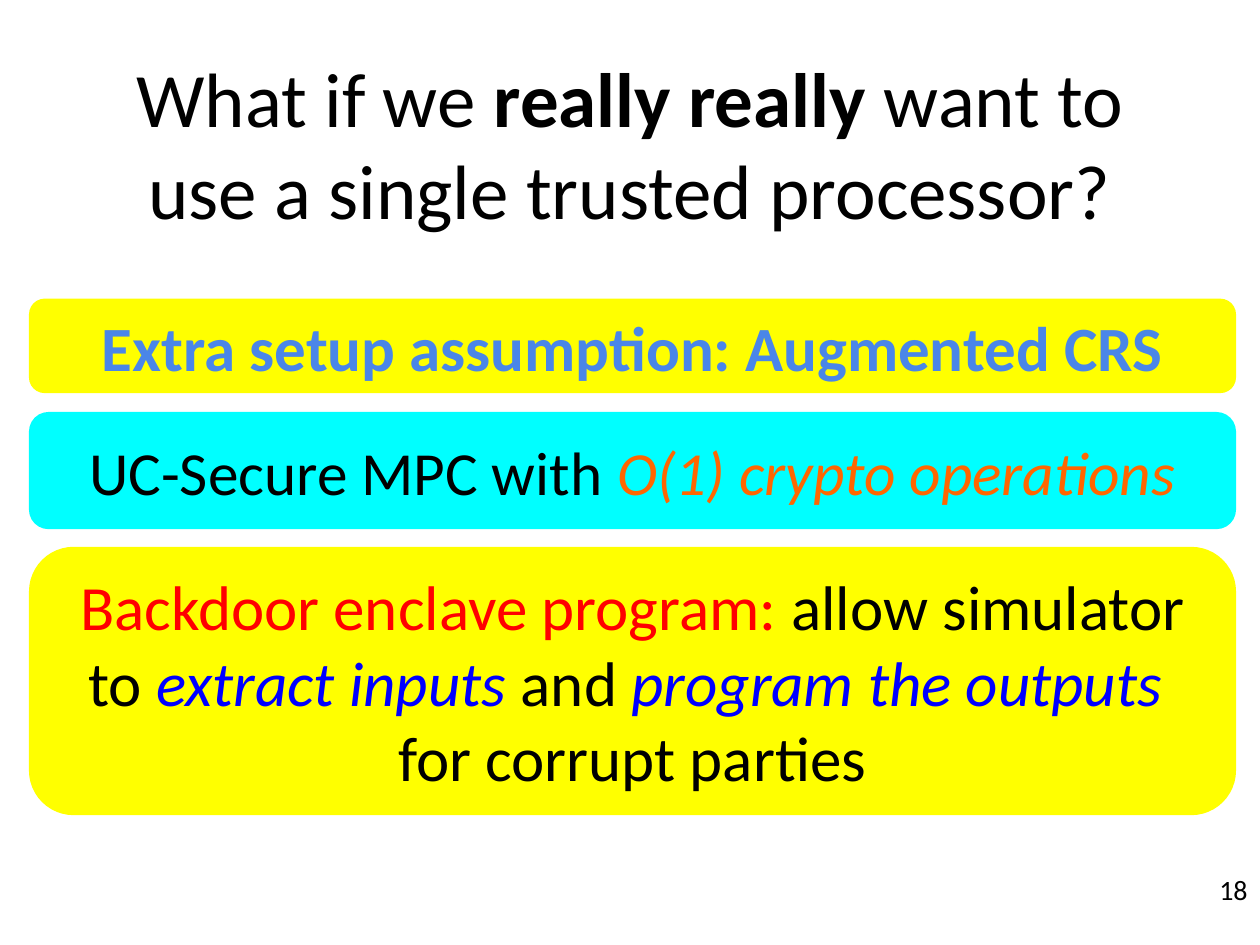
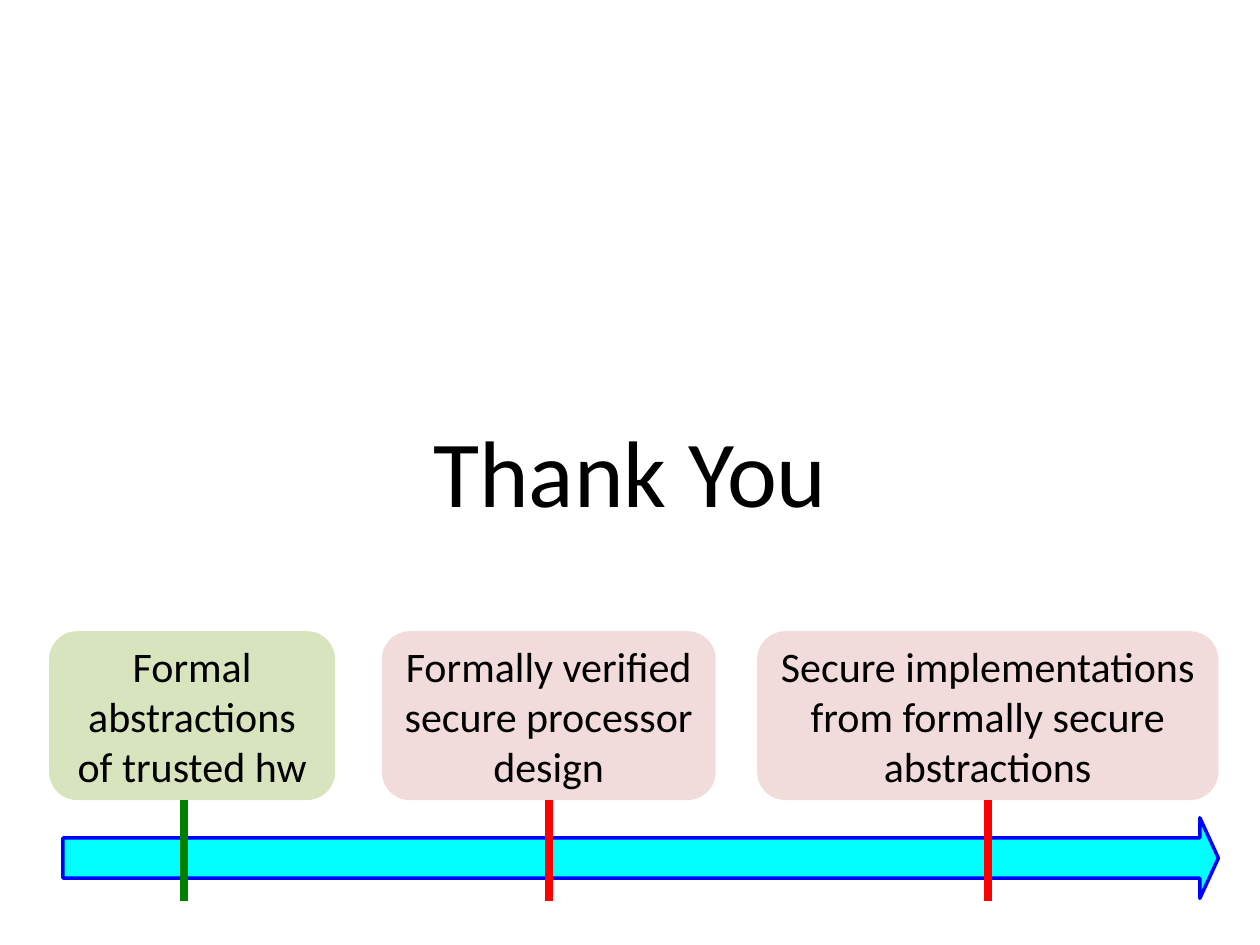
"""Build two slides: the single trusted processor answer and the closing roadmap."""
import pptx
import pptx.dml.color
import pptx.enum.shapes
import pptx.enum.text
import pptx.util
import lxml.etree

Inches = pptx.util.Inches
Pt = pptx.util.Pt
RGBColor = pptx.dml.color.RGBColor
SHAPE = pptx.enum.shapes.MSO_SHAPE
ALIGN = pptx.enum.text.PP_ALIGN
ANCHOR = pptx.enum.text.MSO_ANCHOR

FONT = "Calibri"
BLACK = RGBColor(0x00, 0x00, 0x00)
YELLOW = RGBColor(0xFF, 0xFF, 0x00)
CYAN = RGBColor(0x00, 0xFF, 0xFF)
BLUE = RGBColor(0x00, 0x00, 0xFF)
SKY = RGBColor(0x4A, 0x86, 0xE8)
RED = RGBColor(0xFF, 0x00, 0x00)
ORANGE = RGBColor(0xFF, 0x66, 0x00)
GREEN = RGBColor(0x00, 0x80, 0x00)
PALE_GREEN = RGBColor(0xD7, 0xE4, 0xBD)
PALE_RED = RGBColor(0xF2, 0xDC, 0xDB)


def write(sp, size, runs, align=ALIGN.CENTER, anchor=ANCHOR.MIDDLE):
    tf = sp.text_frame
    tf.word_wrap = True
    tf.vertical_anchor = anchor
    tf.margin_left = tf.margin_right = tf.margin_top = tf.margin_bottom = Inches(0.1)
    p = tf.paragraphs[0]
    p.alignment = align
    for text, color, style in runs:
        if text == "\n":
            p.add_line_break()
            continue
        r = p.add_run()
        r.text = text
        r.font.name = FONT
        r.font.size = Pt(size)
        r.font.color.rgb = color
        r.font.bold = style == "b"
        r.font.italic = style == "i"


def add_block(s, kind, left, top, width, height, fill):
    sp = s.shapes.add_shape(kind, Inches(left), Inches(top), Inches(width), Inches(height))
    sp.shadow.inherit = False
    sp.fill.solid()
    sp.fill.fore_color.rgb = fill
    sp.line.fill.background()
    return sp


prs = pptx.Presentation()
prs.slide_width = Inches(10)
prs.slide_height = Inches(7.5)

titles = [
    (0.3, 1.52, 44, [("What if we ", BLACK, ""), ("really really", BLACK, "b"),
                     (" want to use a single trusted processor?", BLACK, "")]),
    (3.18, 0.89, 54, [("Thank You", BLACK, "")]),
]
for top, height, size, runs in titles:
    s = prs.slides.add_slide(prs.slide_layouts[6])
    sp = s.shapes.add_textbox(Inches(0.5), Inches(top), Inches(9), Inches(height))
    write(sp, size, runs, anchor=ANCHOR.TOP)

s = prs.slides[0]
sp = s.shapes.add_textbox(Inches(9.36), Inches(6.61), Inches(0.64), Inches(0.89))
write(sp, 16, [("18", BLACK, "")], align=ALIGN.RIGHT)

bands = [
    (2.37, 0.75, YELLOW, 36, [("Extra setup assumption: Augmented CRS", SKY, "b")]),
    (3.27, 0.93, CYAN, 35, [("UC-Secure MPC with ", BLACK, ""),
                            ("O(1) crypto operations", ORANGE, "i")]),
    (4.34, 2.13, YELLOW, 36, [("Backdoor enclave program:", RED, ""),
                              (" allow simulator to ", BLACK, ""),
                              ("extract inputs ", BLUE, "i"),
                              ("and ", BLACK, ""),
                              ("program the outputs ", BLUE, "i"),
                              ("\n", BLACK, ""),
                              ("for corrupt parties", BLACK, "")]),
]
for top, height, fill, size, runs in bands:
    sp = add_block(s, SHAPE.ROUNDED_RECTANGLE, 0.23, top, 9.58, height, fill)
    write(sp, size, runs)

s = prs.slides[1]
timeline = add_block(s, SHAPE.RIGHT_ARROW, 0.5, 6.49, 9.17, 0.64, CYAN)
timeline.adjustments[0] = 0.5
timeline.adjustments[1] = 0.23
timeline.line.color.rgb = BLUE
timeline.line.width = Pt(2)

milestones = [
    (0.39, 2.27, 1.46, PALE_GREEN, GREEN, "Formal abstractions of trusted hw"),
    (3.03, 2.65, None, PALE_RED, RED, "Formally verified secure processor design"),
    (6.01, 3.66, None, PALE_RED, RED, "Secure implementations from formally secure abstractions"),
]
for left, width, tick_x, fill, tick_color, text in milestones:
    sp = add_block(s, SHAPE.ROUNDED_RECTANGLE, left, 5.01, width, 1.34, fill)
    write(sp, 24, [(text, BLACK, "")])
    x = Inches(tick_x or left + width / 2)
    tick = s.shapes.add_connector(pptx.enum.shapes.MSO_CONNECTOR.STRAIGHT,
                                  x, Inches(6.35), x, Inches(7.15))
    if tick_x is None:
        tick.begin_connect(sp, 2)
    tick.line.color.rgb = tick_color
    tick.line.width = Pt(4.5)
    lxml.etree.SubElement(tick._element.spPr, pptx.oxml.ns.qn("a:effectLst"))

prs.save("out.pptx")
